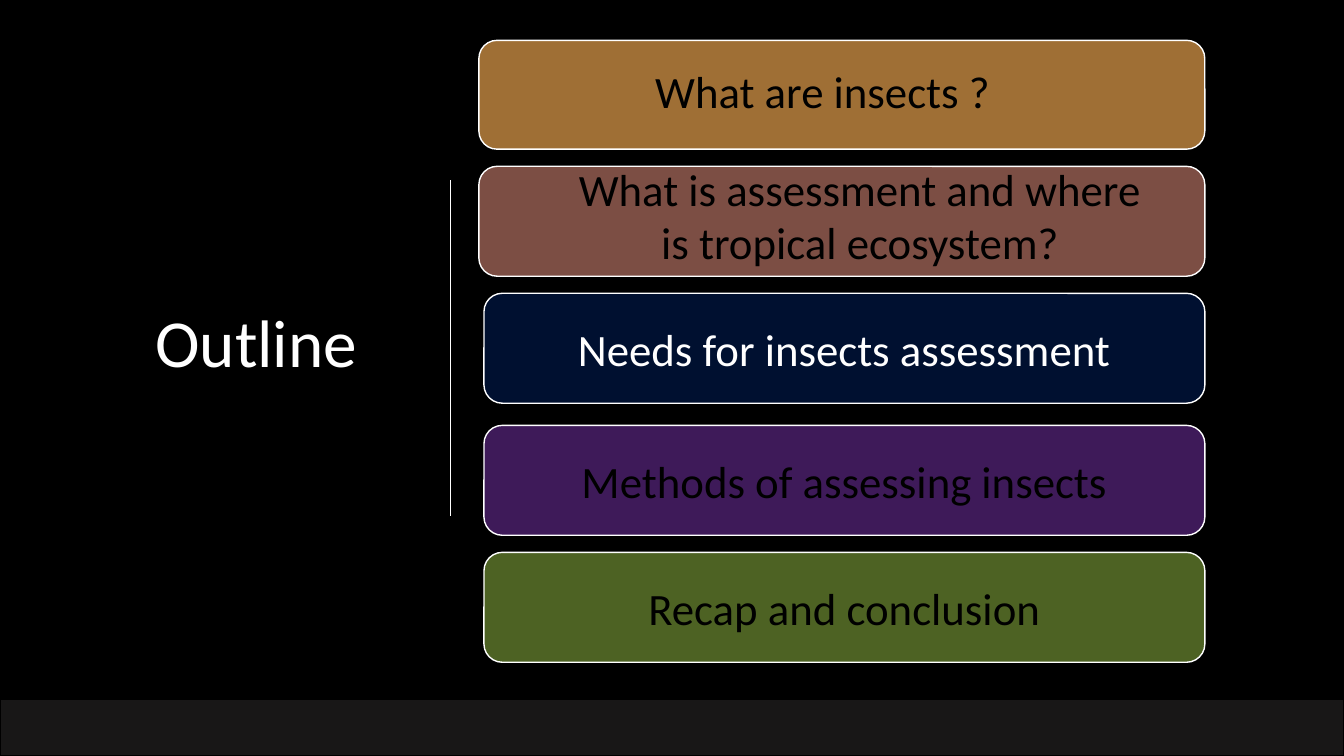
from pptx import Presentation
from pptx.dml.color import RGBColor
from pptx.enum.shapes import MSO_CONNECTOR, MSO_SHAPE
from pptx.enum.text import MSO_ANCHOR, PP_ALIGN
from pptx.oxml.ns import qn
from pptx.util import Pt
from lxml import etree

ROUNDED, RECTANGLE = MSO_SHAPE.ROUNDED_RECTANGLE, MSO_SHAPE.RECTANGLE
STRAIGHT = MSO_CONNECTOR.STRAIGHT
LEFT, CENTER = PP_ALIGN.LEFT, PP_ALIGN.CENTER
TOP, MIDDLE = MSO_ANCHOR.TOP, MSO_ANCHOR.MIDDLE
TITLE_ONLY = 5
PX = 9144  # 100 px to the inch
WIDTH, HEIGHT = 1333, 750
FONT = "Calibri"

# Card box, fill, opacity in percent, text, text colour, separate text box
CARDS = [
    ((475, 40, 720, 108), "DA994A", 73, "What are insects ?", "000000",
     (640, 58, 394, 64)),
    ((475, 165, 720, 109), "E28F7D", 55,
     "What is assessment and where is tropical ecosystem?", "000000",
     (553, 155, 600, 118)),
    ((480, 291, 715, 109), "002060", 51, "Needs for insects assessment",
     "FFFFFF", None),
    ((480, 422, 715, 109), "7030A0", 56, "Methods of assessing insects",
     "000000", None),
    ((480, 548, 715, 109), "729134", 68, "Recap and conclusion",
     "000000", None),
]


def color(value):
    return RGBColor.from_string(value)


def emu(box):
    return [length * PX for length in box]


def write_text(shape, text, size=32, fill="000000", align=CENTER, anchor=MIDDLE):
    frame = shape.text_frame
    frame.word_wrap = True
    frame.vertical_anchor = anchor
    para = frame.paragraphs[0]
    para.alignment = align
    para.line_spacing = 1.0
    para.space_before = Pt(0)
    span = para.add_run()
    span.text = text
    span.font.name = FONT
    span.font.size = Pt(size)
    span.font.color.rgb = color(fill)


def add_panel(page, kind, box, fill, line, opacity=100):
    panel = page.shapes.add_shape(kind, *emu(box))
    panel.shadow.inherit = False
    panel.fill.solid()
    panel.fill.fore_color.rgb = color(fill)
    panel.line.color.rgb = color(line)
    panel.line.width = Pt(1)
    if opacity < 100:
        tone = panel.fill._xPr.find(qn("a:solidFill"))[0]
        etree.SubElement(tone, qn("a:alpha"), val=str(opacity * 1000))
    return panel


def add_heading(page, box):
    left, top, width, height = box
    title = page.shapes.title
    title.left, title.top, title.width, title.height = emu(box)
    write_text(title, "Outline", size=48, fill="FFFFFF", align=LEFT, anchor=TOP)
    # Divider to the right of the heading
    x, y = left + 303, top - 114
    divider = page.shapes.add_connector(STRAIGHT, *emu((x, y, x, y + 333)))
    divider.line.color.rgb = color("FFFFFF")
    divider.line.width = Pt(0.5)
    etree.SubElement(divider._element.spPr, qn("a:effectLst"))


def add_card(page, box, fill, opacity, text, text_color, text_box):
    holder = add_panel(page, ROUNDED, box, fill, "FFFFFF", opacity)
    if text_box:
        holder = page.shapes.add_textbox(*emu(text_box))
    write_text(holder, text, fill=text_color,
               align=LEFT if text == CARDS[0][3] else CENTER,
               anchor=TOP if text_box else MIDDLE)


def add_footer(page, box):
    add_panel(page, RECTANGLE, box, "181717", "000000")


def build_outline(deck):
    page = deck.slides.add_slide(deck.slide_layouts[TITLE_ONLY])
    page.background.fill.solid()
    page.background.fill.fore_color.rgb = color("000000")
    add_heading(page, (144, 293, 316, 91))
    for card in CARDS:
        add_card(page, *card)
    add_footer(page, (0, 694, WIDTH, HEIGHT - 694))


def main():
    deck = Presentation()
    deck.slide_width, deck.slide_height = emu((WIDTH, HEIGHT))
    build_outline(deck)
    deck.save("out.pptx")


if __name__ == "__main__":
    main()
